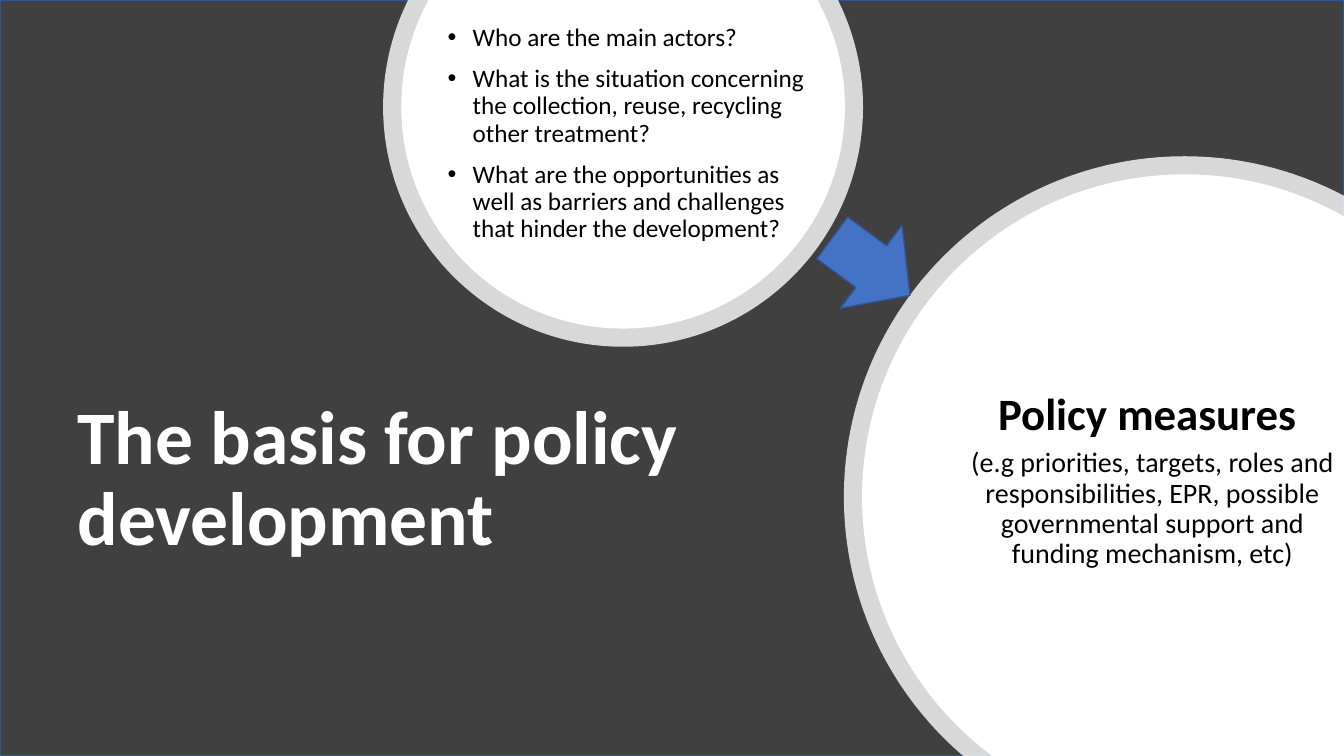
import math

from lxml import etree
from pptx import Presentation
from pptx.dml.color import RGBColor
from pptx.enum.shapes import MSO_SHAPE
from pptx.enum.text import MSO_ANCHOR, PP_ALIGN
from pptx.oxml.ns import qn
from pptx.util import Inches, Pt

RECTANGLE = MSO_SHAPE.RECTANGLE
RIGHT_ARROW = MSO_SHAPE.RIGHT_ARROW
MIDDLE = MSO_ANCHOR.MIDDLE
LEFT, CENTER = PP_ALIGN.LEFT, PP_ALIGN.CENTER

SLIDE_W, SLIDE_H = 13.33, 7.5
QUARTER = math.pi / 2
FONT = "Calibri"
COLORS = {
    "background": "404040",
    "outline": "325491",
    "arrow": "4472C4",
    "white": "FFFFFF",
    "black": "000000",
}
QUESTIONS = [
    "Who are the main actors?",
    "What is the situation concerning the collection, reuse, recycling other treatment?",
    "What are the opportunities as well as barriers and challenges that hinder the development?",
]
MEASURES = [
    "Policy measures ",
    "(e.g priorities, targets, roles and responsibilities, EPR, possible "
    "governmental support and funding mechanism, etc)",
]


def color(name):
    return RGBColor.from_string(COLORS[name])


def add_preset(slide, kind, left, top, width, height, fill, rotation=0):
    shape = slide.shapes.add_shape(
        kind, Inches(left), Inches(top), Inches(width), Inches(height))
    shape.shadow.inherit = False
    shape.fill.solid()
    shape.fill.fore_color.rgb = color(fill)
    shape.line.color.rgb = color("outline")
    shape.line.width = Pt(1)
    shape.rotation = rotation


def bend_segments(shape, center, radius, angles):
    """Turn the straight segments between the angles into circular curves."""
    segments = list(shape._element.iter(qn("a:lnTo")))
    for segment, start, end in zip(segments, angles, angles[1:]):
        reach = 4 / 3 * math.tan((end - start) / 4)
        segment.tag = qn("a:cubicBezTo")
        for i, (angle, pull) in enumerate([(start, reach), (end, -reach)]):
            x = center[0] + radius * (math.cos(angle) - pull * math.sin(angle))
            y = center[1] + radius * (math.sin(angle) + pull * math.cos(angle))
            handle = etree.Element(qn("a:pt"), x=str(Inches(x) - shape.left),
                                   y=str(Inches(y) - shape.top))
            segment.insert(i, handle)


def add_cut_circle(slide, center, radius, start, end, corners=(), opacity=100):
    """Draw the arc from start to end (radians, clockwise), closed by corners."""
    quarters = range(math.ceil(start / QUARTER), math.floor(end / QUARTER) + 1)
    angles = [start] + [n * QUARTER for n in quarters] + [end]
    points = [(center[0] + radius * math.cos(a), center[1] + radius * math.sin(a))
              for a in angles]
    points = [(Inches(x), Inches(y)) for x, y in points + list(corners)]
    builder = slide.shapes.build_freeform(*points[0])
    builder.add_line_segments(points[1:], close=True)
    circle = builder.convert_to_shape()
    bend_segments(circle, center, radius, angles)
    circle.shadow.inherit = False
    circle.fill.solid()
    circle.fill.fore_color.rgb = color("white")
    circle.line.fill.background()
    if opacity < 100:
        rgb = circle._element.spPr.find(".//" + qn("a:srgbClr"))
        etree.SubElement(rgb, qn("a:alpha"), val=str(opacity * 1000))


def add_top_circle(slide, radius, opacity=100):
    center = (6.18, 1.06)
    cut = math.asin(center[1] / radius)
    add_cut_circle(slide, center, radius, -cut, math.pi + cut, opacity=opacity)


def add_corner_circle(slide, radius, opacity=100):
    center = (11.75, 4.93)
    start = math.pi - math.asin((SLIDE_H - center[1]) / radius)
    end = 2 * math.pi - math.acos((SLIDE_W - center[0]) / radius)
    add_cut_circle(slide, center, radius, start, end, [(SLIDE_W, SLIDE_H)], opacity)


def add_bullet(paragraph):
    props = paragraph._p.get_or_add_pPr()
    props.set("marL", str(Inches(0.25)))
    props.set("indent", str(-Inches(0.25)))
    etree.SubElement(props, qn("a:buFont"), typeface="Arial")
    etree.SubElement(props, qn("a:buChar"), char="•")


def add_text(slide, left, top, width, height, lines, sizes, ink="black",
             bold_first=False, align=LEFT, gap=0, bullets=False):
    box = slide.shapes.add_textbox(
        Inches(left), Inches(top), Inches(width), Inches(height))
    frame = box.text_frame
    frame.word_wrap = True
    frame.vertical_anchor = MIDDLE
    frame.text = "\n".join(lines)
    for i, (paragraph, size) in enumerate(zip(frame.paragraphs, sizes)):
        if bullets:
            add_bullet(paragraph)
        paragraph.alignment = align
        paragraph.line_spacing = 0.9
        paragraph.space_before = Pt(0)
        paragraph.space_after = Pt(gap)
        font = paragraph.runs[0].font
        font.name = FONT
        font.size = Pt(size)
        font.bold = bold_first and i == 0
        font.color.rgb = color(ink)


def main():
    prs = Presentation()
    prs.slide_width, prs.slide_height = Inches(SLIDE_W), Inches(SLIDE_H)
    slide = prs.slides.add_slide(prs.slide_layouts[6])

    # Background and title
    add_preset(slide, RECTANGLE, 0, 0, SLIDE_W, SLIDE_H, "background")
    add_text(slide, 0.67, 3.44, 6.62, 2.65, ["The basis for policy development"],
             [54], ink="white", bold_first=True)

    # Translucent rims, then the solid circles
    add_top_circle(slide, 2.38, opacity=80)
    add_corner_circle(slide, 3.38, opacity=80)
    add_top_circle(slide, 2.2)
    add_corner_circle(slide, 3.2)

    # Circle contents
    add_text(slide, 4.34, 0.13, 3.95, 2.4, QUESTIONS, [18] * len(QUESTIONS),
             gap=10, bullets=True)
    add_text(slide, 9.53, 3.25, 3.8, 3.04, MEASURES, [32, 20],
             bold_first=True, align=CENTER, gap=6)

    # Arrow from questions to measures
    add_preset(slide, RIGHT_ARROW, 8.16, 2.13, 0.96, 1.03, "arrow", rotation=36.5)

    prs.save("out.pptx")


if __name__ == "__main__":
    main()
